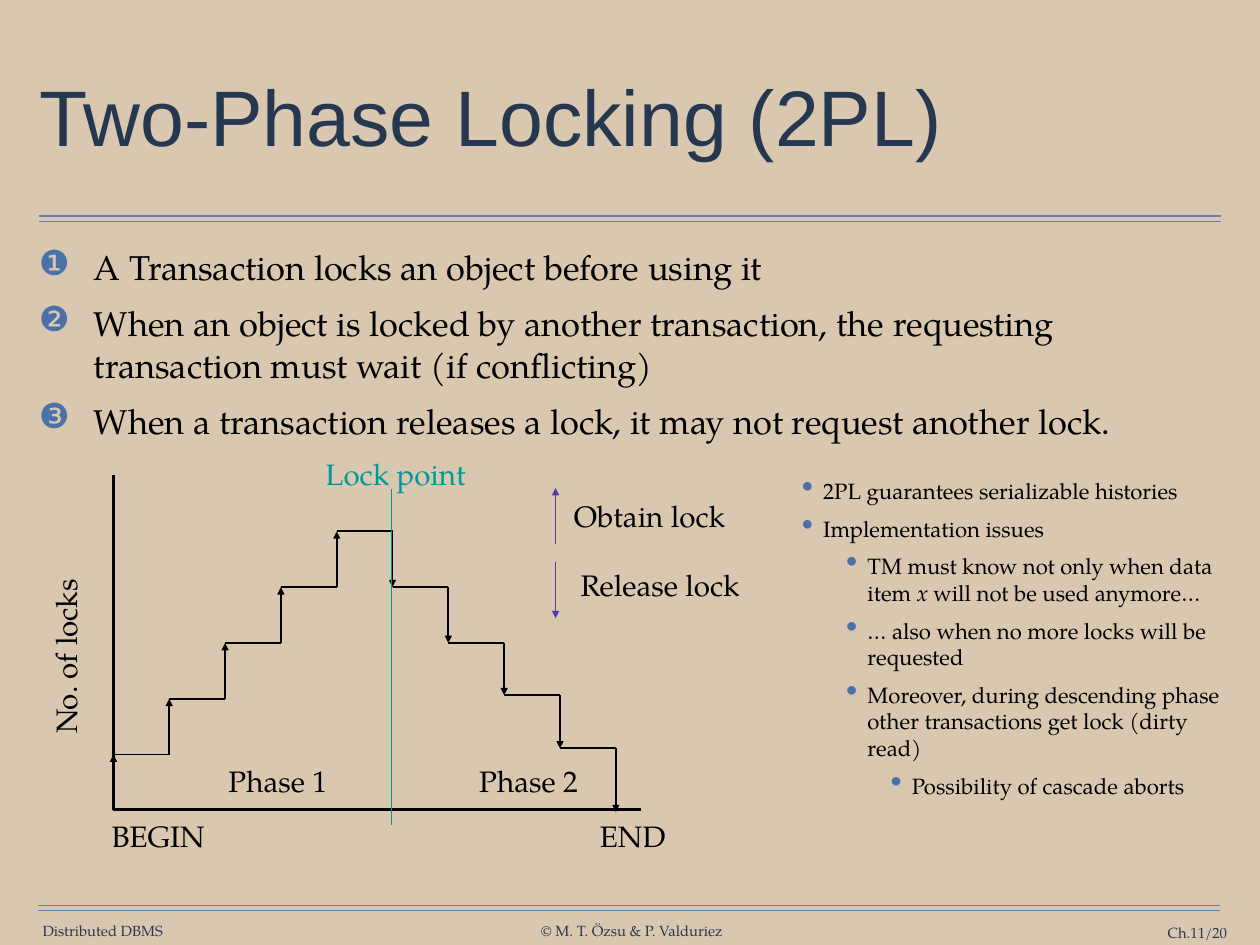
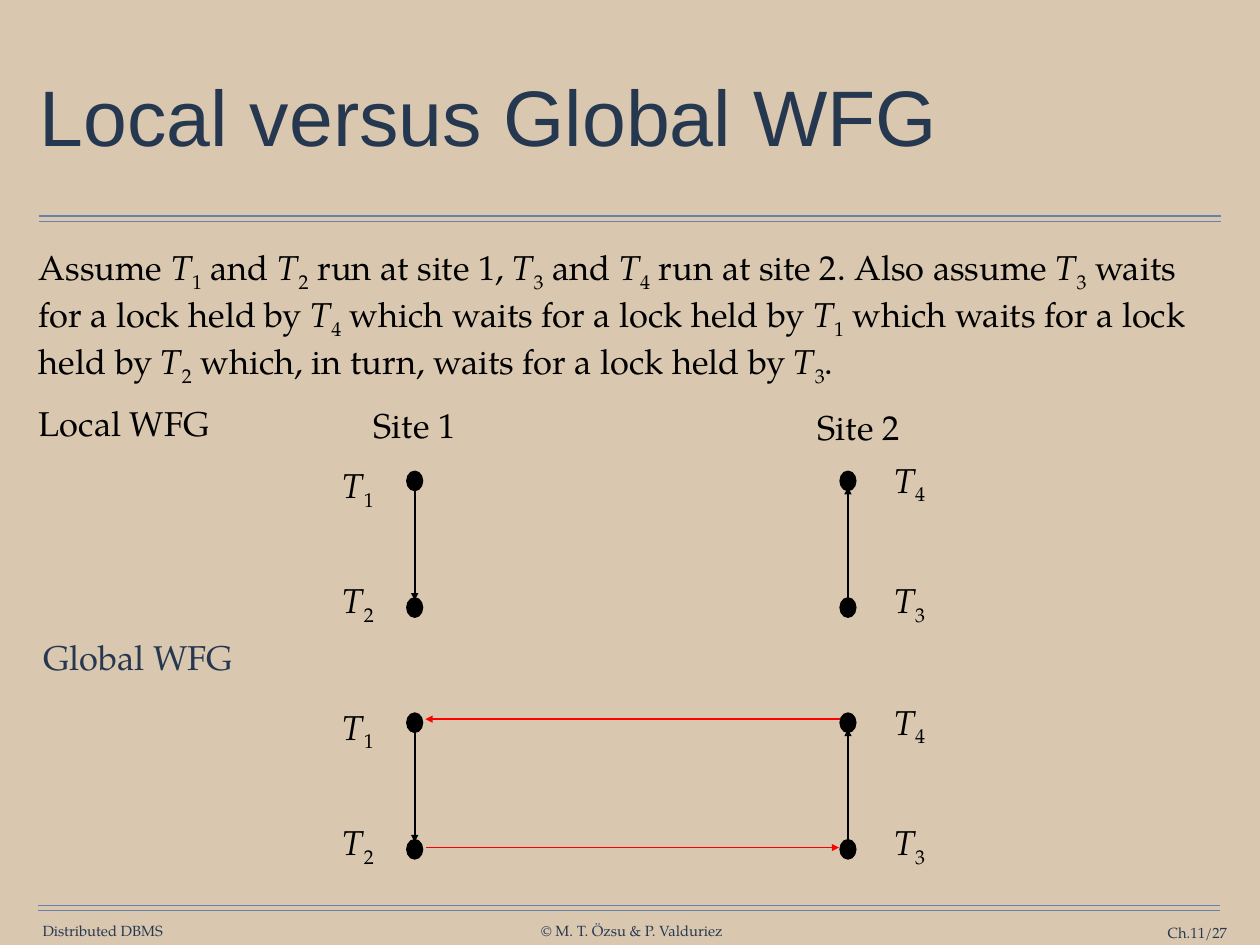
from dataclasses import dataclass
from itertools import pairwise
from typing import Any

from lxml.etree import SubElement
from pptx import Presentation
from pptx.dml.color import RGBColor
from pptx.enum.shapes import MSO_CONNECTOR, MSO_SHAPE
from pptx.enum.text import MSO_ANCHOR, MSO_AUTO_SIZE, PP_ALIGN
from pptx.oxml.ns import qn
from pptx.slide import Slide
from pptx.text.text import TextFrame
from pptx.util import Pt

PX = 9144


@dataclass(frozen=True)
class Theme:
    sand: str = "D9C8AF"
    navy: str = "263750"
    rule: str = "6682AA"
    mark: str = "4A71A9"
    ink: str = "000000"
    teal: str = "009999"
    plum: str = "4C3BB1"
    red: str = "FF0000"
    head: str = "Arial"
    text: str = "TeX Gyre Pagella"
    title: int = 64
    body: int = 28
    label: int = 24
    note: int = 18
    foot: int = 12


THEME = Theme()


@dataclass(frozen=True)
class Box:
    left: int
    top: int
    width: int
    height: int

    def emu(self) -> tuple[int, ...]:
        return tuple(PX * n for n in (self.left, self.top, self.width, self.height))


@dataclass(frozen=True)
class Para:
    text: str
    mark: str = ""
    indent: int = 0
    hang: int = 0
    level: int = 0
    scale: int = 100


@dataclass(frozen=True)
class Label:
    text: str
    box: Box
    color: str = THEME.ink
    size: int = THEME.label
    turn: int = 0


@dataclass(frozen=True)
class Line:
    start: tuple[int, int]
    end: tuple[int, int]
    color: str = THEME.ink
    width: float = 1.5
    arrow: bool = True


def apply(item: Any, form: dict[str, Any]) -> None:
    for key, value in form.items():
        setattr(item, key, value)


def pad_frame(frame: TextFrame, across: int, down: int, **form: Any) -> None:
    apply(frame, {
        "margin_left": across * PX, "margin_right": across * PX,
        "margin_top": down * PX, "margin_bottom": down * PX,
        "auto_size": MSO_AUTO_SIZE.NONE, **form,
    })


def add_run(para: Any, text: str, size: int, color: str, face: str = THEME.text,
            slant: bool = False, sub: bool = False) -> None:
    if not text:
        return
    run = para.add_run()
    run.text = text
    apply(run.font, {"name": face, "size": Pt(size), "italic": slant})
    run.font.color.rgb = RGBColor.from_string(color)
    if sub:
        run._r.get_or_add_rPr().set("baseline", "-25000")


def add_rich(para: Any, text: str, size: int, color: str) -> None:
    for chunk in text.split("{"):
        name, close, rest = chunk.partition("}")
        if close:
            add_run(para, name[0], size, color, slant=True)
            add_run(para, name[1:], size, color, sub=True)
            add_run(para, rest, size, color)
        else:
            add_run(para, chunk, size, color)


def add_mark(para: Any, item: Para) -> None:
    props = para._p.get_or_add_pPr()
    props.set("marL", str(item.indent * PX))
    props.set("indent", str(-item.hang * PX))
    tint = SubElement(props, qn("a:buClr"))
    SubElement(tint, qn("a:srgbClr"), val=THEME.mark)
    SubElement(props, qn("a:buSzPct"), val=str(item.scale * 1000))
    SubElement(props, qn("a:buChar"), char=item.mark)


def add_list(slide: Slide, box: Box, items: list[Para], size: int, gap: int) -> None:
    frame = slide.shapes.add_textbox(*box.emu()).text_frame
    pad_frame(frame, 6, 6, word_wrap=True)
    for place, item in enumerate(items):
        para = frame.add_paragraph() if place else frame.paragraphs[0]
        apply(para, {"level": item.level, "space_before": Pt(gap if place else 0)})
        if item.mark:
            add_mark(para, item)
        add_rich(para, item.text, size, THEME.ink)


def add_label(slide: Slide, label: Label) -> None:
    shape = slide.shapes.add_textbox(*label.box.emu())
    shape.rotation = label.turn
    pad_frame(shape.text_frame, 14, 7, word_wrap=False)
    para = shape.text_frame.paragraphs[0]
    para.alignment = PP_ALIGN.CENTER
    add_rich(para, label.text, label.size, label.color)


def add_line(slide: Slide, line: Line) -> None:
    ends = (PX * n for n in (*line.start, *line.end))
    shape = slide.shapes.add_connector(MSO_CONNECTOR.STRAIGHT, *ends)
    shape.line.color.rgb = RGBColor.from_string(line.color)
    shape.line.width = Pt(line.width)
    props = shape._element.spPr
    if line.arrow:
        SubElement(props.find(qn("a:ln")), qn("a:tailEnd"), type="triangle")
    SubElement(props, qn("a:effectLst"))


def add_dot(slide: Slide, left: int, top: int) -> None:
    shape = slide.shapes.add_shape(MSO_SHAPE.OVAL, *Box(left, top, 18, 22).emu())
    shape.shadow.inherit = False
    shape.fill.solid()
    shape.fill.fore_color.rgb = RGBColor.from_string(THEME.ink)
    shape.line.color.rgb = RGBColor.from_string(THEME.ink)
    shape.line.width = Pt(1)


def start_slide(deck: Any, title: str, page: int) -> Slide:
    slide = deck.slides.add_slide(deck.slide_layouts[5])
    for left, top in ((44, 244), (44, 250), (43, 1022), (43, 1028)):
        add_line(slide, Line((left, top), (left + 1334, top), THEME.rule, 1, False))
    feet = (
        ("Distributed DBMS", Box(47, 1041, 138, 20), PP_ALIGN.CENTER),
        ("© M. T. Özsu & P. Valduriez", Box(609, 1041, 208, 20), PP_ALIGN.CENTER),
        (f"Ch.11/{page}", Box(1231, 1043, 154, 20), PP_ALIGN.RIGHT),
    )
    for text, box, align in feet:
        frame = slide.shapes.add_textbox(*box.emu()).text_frame
        pad_frame(frame, 0, 0, word_wrap=align == PP_ALIGN.RIGHT,
                  vertical_anchor=MSO_ANCHOR.MIDDLE)
        frame.paragraphs[0].alignment = align
        add_run(frame.paragraphs[0], text, THEME.foot, THEME.navy)
    head = slide.shapes.title
    apply(head, dict(zip(("left", "top", "width", "height"),
                         Box(39, 49, 1344, 176).emu())))
    pad_frame(head.text_frame, 6, 6, word_wrap=True,
              vertical_anchor=MSO_ANCHOR.MIDDLE)
    para = head.text_frame.paragraphs[0]
    apply(para, {"alignment": PP_ALIGN.LEFT, "line_spacing": 0.9})
    add_run(para, title, THEME.title, THEME.navy, THEME.head)
    return slide


def add_stairs(slide: Slide) -> None:
    left, base, step = 128, 914, 63
    pen = slide.shapes.build_freeform(left * PX, 536 * PX)
    pen.add_line_segments([(left * PX, base * PX), (724 * PX, base * PX)], close=False)
    axis = pen.convert_to_shape()
    axis.shadow.inherit = False
    axis.fill.background()
    axis.line.color.rgb = RGBColor.from_string(THEME.ink)
    axis.line.width = Pt(2)
    climb = [base + 1 - step * n for n in range(6)]
    levels = [*climb, 663, 726, 785, 845, 917]
    for place, (old, new) in enumerate(pairwise(levels)):
        side = left + step * place
        add_line(slide, Line((side, old), (side, new)))
        if place < len(levels) - 2:
            add_line(slide, Line((side, new), (side + step, new), arrow=False))
    add_line(slide, Line((442, 552), (442, 931), THEME.teal, 1, False))
    add_line(slide, Line((627, 614), (627, 551), THEME.plum, 1))
    add_line(slide, Line((627, 635), (627, 698), THEME.plum, 1))
    for label in (
        Label("Obtain lock", Box(631, 555, 204, 54)),
        Label("Release lock", Box(638, 633, 214, 54)),
        Label("Lock point", Box(351, 508, 191, 54), THEME.teal),
        Label("Phase 1", Box(243, 854, 141, 54)),
        Label("Phase 2", Box(526, 854, 141, 54)),
        Label("BEGIN", Box(111, 917, 135, 54)),
        Label("END", Box(663, 917, 102, 54)),
        Label("No. of locks", Box(-30, 714, 209, 54), turn=270),
    ):
        add_label(slide, label)


def add_graph(slide: Slide, top: int) -> None:
    for text, left, shift in (("{T1}", 370, -15), ("{T2}", 370, 115),
                              ("{T4}", 992, -21), ("{T3}", 992, 115)):
        add_label(slide, Label(text, Box(left, top + shift, 69, 61), size=THEME.body))
    for left in (459, 948):
        for shift in (0, 143):
            add_dot(slide, left, top + shift)
    add_line(slide, Line((468, top + 17), (468, top + 146)))
    add_line(slide, Line((957, top + 148), (957, top + 18)))


def bullet(text: str, level: int = 0) -> Para:
    return Para(text, "•", 24 + 50 * level, 24, level, 150)


def draw_locks(deck: Any) -> None:
    slide = start_slide(deck, "Two-Phase Locking (2PL)", 20)
    rules = (
        "A Transaction locks an object before using it",
        "When an object is locked by another transaction, the requesting "
        "transaction must wait (if conflicting)",
        "When a transaction releases a lock, it may not request another lock.",
    )
    items = [Para(text, mark, 62, 62) for mark, text in zip("❶❷❸", rules)]
    add_list(slide, Box(38, 272, 1344, 740), items, THEME.body, 12)
    add_stairs(slide)
    add_list(slide, Box(899, 533, 502, 445), [
        bullet("2PL guarantees serializable histories"),
        bullet("Implementation issues"),
        bullet("TM must know not only when data item {x} will not be used anymore…", 1),
        bullet("… also when no more locks will be requested", 1),
        bullet("Moreover, during descending phase other transactions "
               "get lock (dirty read)", 1),
        bullet("Possibility of cascade aborts", 2),
    ], THEME.note, 9)


def draw_graphs(deck: Any) -> None:
    slide = start_slide(deck, "Local versus Global WFG", 27)
    add_list(slide, Box(38, 272, 1344, 740), [
        Para("Assume {T1} and {T2} run at site 1, {T3} and {T4} run at site 2. "
             "Also assume {T3} waits for a lock held by {T4} which waits for a lock "
             "held by {T1} which waits for a lock held by {T2} which, in turn, "
             "waits for a lock held by {T3}."),
        Para("Local WFG"),
    ], THEME.body, 12)
    for label in (
        Label("Global WFG", Box(38, 711, 236, 61), THEME.navy, THEME.body),
        Label("Site 1", Box(407, 449, 122, 61), size=THEME.body),
        Label("Site 2", Box(908, 451, 122, 61), size=THEME.body),
    ):
        add_label(slide, label)
    for top in (532, 805):
        add_graph(slide, top)
    add_line(slide, Line((948, 812), (480, 812), THEME.red))
    add_line(slide, Line((481, 957), (947, 957), THEME.red))


def main() -> None:
    deck = Presentation()
    apply(deck, {"slide_width": 1422 * PX, "slide_height": 1067 * PX})
    fill = deck.slide_master.background.fill
    fill.solid()
    fill.fore_color.rgb = RGBColor.from_string(THEME.sand)
    draw_locks(deck)
    draw_graphs(deck)
    deck.save("out.pptx")


if __name__ == "__main__":
    main()
